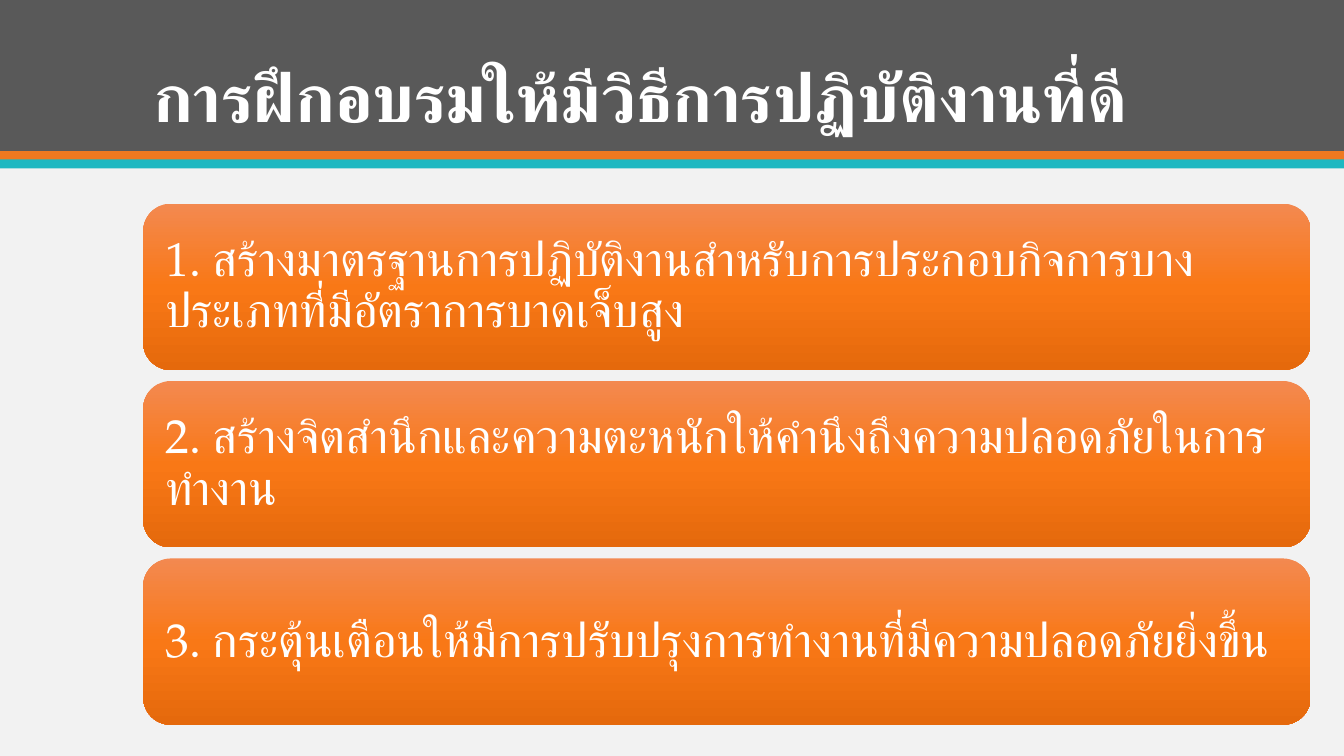
from dataclasses import dataclass
from lxml import etree
from pptx import Presentation
from pptx.dml.color import RGBColor as Rgb
from pptx.enum.shapes import MSO_SHAPE as Kind
from pptx.enum.text import MSO_ANCHOR as Anchor, MSO_AUTO_SIZE as Fit, PP_ALIGN as Align
from pptx.oxml import parse_xml
from pptx.oxml.ns import qn, nsdecls
from pptx.util import Inches, Pt


@dataclass(frozen=True)
class Theme:
    font: str = "TeX Gyre Pagella"
    page: str = "F2F2F2"
    head: str = "595959"
    warm: str = "EF7920"
    cool: str = "1EB8C1"
    text: str = "FFFFFF"
    glow: tuple = ((0, "F38950"), (50, "F97816"), (100, "E5690C"))
    big: int = 48
    mid: int = 34


class Deck:
    def __init__(self, theme):
        self.theme = theme
        self.prs = Presentation()
        self.prs.slide_width = Inches(13.33)
        self.prs.slide_height = Inches(7.5)
        self.slide = self.prs.slides.add_slide(self.prs.slide_layouts[5])
        fill = self.slide.background.fill
        fill.solid()
        fill.fore_color.rgb = Rgb.from_string(theme.page)

    def shape(self, kind, *box):
        item = self.slide.shapes.add_shape(kind, *map(Inches, box))
        item.shadow.inherit = False
        item.line.fill.background()
        return item

    def band(self, top, high, color):
        item = self.shape(Kind.RECTANGLE, 0, top, 13.33, high)
        item.fill.solid()
        item.fill.fore_color.rgb = Rgb.from_string(color)

    def label(self, item, text, size, anchor, bold=False):
        frame = item.text_frame
        frame.text = text
        frame.word_wrap = True
        frame.auto_size = Fit.NONE
        frame.vertical_anchor = anchor
        para = frame.paragraphs[0]
        para.alignment = Align.LEFT
        para.line_spacing = 0.9
        for run in para.runs:
            font = run.font
            font.name = self.theme.font
            font.size = Pt(size)
            font.bold = bold
            font.color.rgb = Rgb.from_string(self.theme.text)
            props = run._r.get_or_add_rPr()
            etree.SubElement(props, qn("a:cs")).set("typeface", self.theme.font)

    def title(self, text, *box):
        item = self.slide.shapes.title
        item.left, item.top, item.width, item.height = map(Inches, box)
        self.label(item, text, self.theme.big, Anchor.BOTTOM, True)
        self.slide.shapes._spTree.append(item._element)

    def card(self, text, *box):
        item = self.shape(Kind.ROUNDED_RECTANGLE, *box)
        stops = "".join(
            f'<a:gs pos="{pos * 1000}"><a:srgbClr val="{color}"/></a:gs>'
            for pos, color in self.theme.glow
        )
        grad = parse_xml(
            f'<a:gradFill {nsdecls("a")} rotWithShape="1"><a:gsLst>{stops}</a:gsLst>'
            '<a:lin ang="5400000" scaled="0"/></a:gradFill>'
        )
        item._element.spPr.find(qn("a:prstGeom")).addnext(grad)
        frame = item.text_frame
        frame.margin_left = frame.margin_right = Inches(0.14)
        frame.margin_top = frame.margin_bottom = Inches(0.14)
        self.label(item, text, self.theme.mid, Anchor.MIDDLE)


def main():
    theme = Theme()
    deck = Deck(theme)
    deck.band(0, 1.5, theme.head)
    deck.band(1.5, 0.09, theme.warm)
    deck.band(1.58, 0.09, theme.cool)
    deck.title("การฝึกอบรมให้มีวิธีการปฏิบัติงานที่ดี", 1.42, 0.28, 10.5, 1.13)
    steps = (
        "1. สร้างมาตรฐานการปฏิบัติงานสำหรับการประกอบกิจการบางประเภทที่มีอัตราการบาดเจ็บสูง",
        "2. สร้างจิตสำนึกและความตะหนักให้คำนึงถึงความปลอดภัยในการทำงาน",
        "3. กระตุ้นเตือนให้มีการปรับปรุงการทำงานที่มีความปลอดภัยยิ่งขึ้น",
    )
    for row, step in enumerate(steps):
        deck.card(step, 1.42, 2.02 + 1.76 * row, 11.58, 1.65)
    deck.prs.save("out.pptx")


if __name__ == "__main__":
    main()
